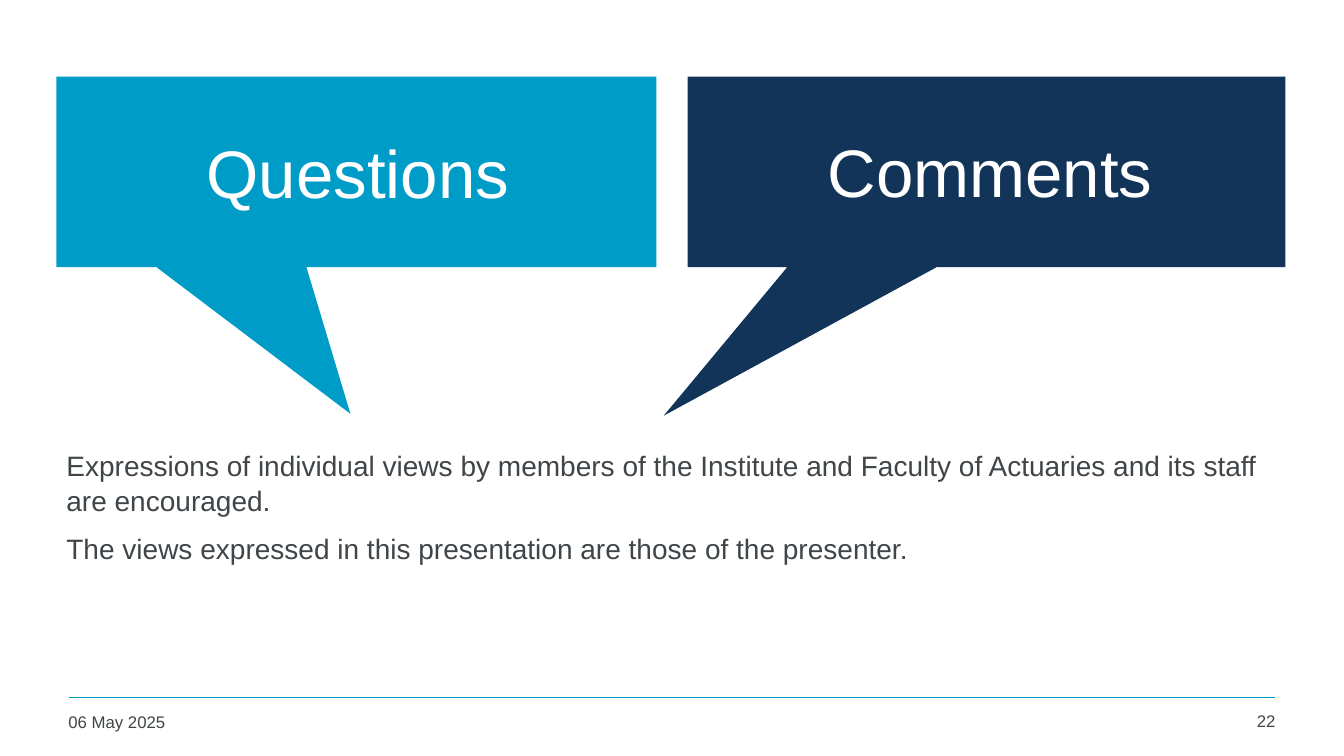
import pptx
import pptx.util
import pptx.dml.color
import pptx.enum.shapes
import pptx.enum.text
import lxml.etree

# Content
COLOURS = {"sky": "009CC8", "navy": "113458", "ink": "3F4548", "white": "FFFFFF"}
BODY = [
    "Expressions of individual views by members of the Institute and Faculty of Actuaries "
    "and its staff are encouraged.",
    "The views expressed in this presentation are those of the presenter.",
]
# Bubble place, pointer tip as shares of the bubble, colour, label, label place
BUBBLES = [
    ((0.56, 0.76, 5.95, 1.89), (-0.01, 1.27), "sky", "Questions", (0.83, 1.08, 5.44, 1.25)),
    ((6.82, 0.76, 5.93, 1.89), (-0.54, 1.28), "navy", "Comments", (7.06, 1.07, 5.52, 1.25)),
]
FOOTER = [
    ("06 May 2025", (0.58, 7.01, 2.94, 0.36), "LEFT"),
    ("22", (11.81, 7.0, 0.94, 0.37), "RIGHT"),
]
RULE = (0.68, 6.92, 12.65, 6.92)

Pt = pptx.util.Pt
ALIGN = pptx.enum.text.PP_ALIGN
ANCHOR = pptx.enum.text.MSO_ANCHOR


def inches(values):
    return [pptx.util.Inches(value) for value in values]


def rgb(name):
    return pptx.dml.color.RGBColor.from_string(COLOURS[name])


def add_text(page, place, lines, size, colour, align="LEFT", anchor="TOP", **spacing):
    frame = page.shapes.add_textbox(*inches(place)).text_frame
    frame.word_wrap = True
    frame.vertical_anchor = ANCHOR[anchor]
    for index, line in enumerate(lines):
        para = frame.paragraphs[0] if index == 0 else frame.add_paragraph()
        para.alignment = ALIGN[align]
        for name, value in spacing.items():
            if index or name != "space_before":
                setattr(para, name, value)
        span = para.add_run()
        span.text = line
        for name, value in {"name": "Arial", "size": Pt(size)}.items():
            setattr(span.font, name, value)
        span.font.color.rgb = rgb(colour)


deck = pptx.Presentation()
deck.slide_width, deck.slide_height = inches((13.33, 7.5))
page = deck.slides.add_slide(deck.slide_layouts[6])

# Footer rule, date and page number
rule = page.shapes.add_connector(pptx.enum.shapes.MSO_CONNECTOR.STRAIGHT, *inches(RULE))
rule.line.color.rgb = rgb("sky")
rule.line.width = Pt(1)
lxml.etree.SubElement(
    rule._element.spPr, "{http://schemas.openxmlformats.org/drawingml/2006/main}effectLst")
for text, place, align in FOOTER:
    add_text(page, place, [text], 12, "ink", align)

# Body text
add_text(page, (0.56, 4.38, 12.02, 2.58), BODY, 20, "ink",
         space_before=Pt(9.5), line_spacing=1.05)

# Speech bubbles
for place, tip, colour, label, label_place in BUBBLES:
    bubble = page.shapes.add_shape(
        pptx.enum.shapes.MSO_SHAPE.RECTANGULAR_CALLOUT, *inches(place))
    bubble.shadow.inherit = False
    bubble.fill.solid()
    bubble.fill.fore_color.rgb = rgb(colour)
    bubble.line.fill.background()
    for index, share in enumerate(tip):
        bubble.adjustments[index] = share
    add_text(page, label_place, [label], 48, "white", "CENTER", "MIDDLE")

deck.save("out.pptx")
